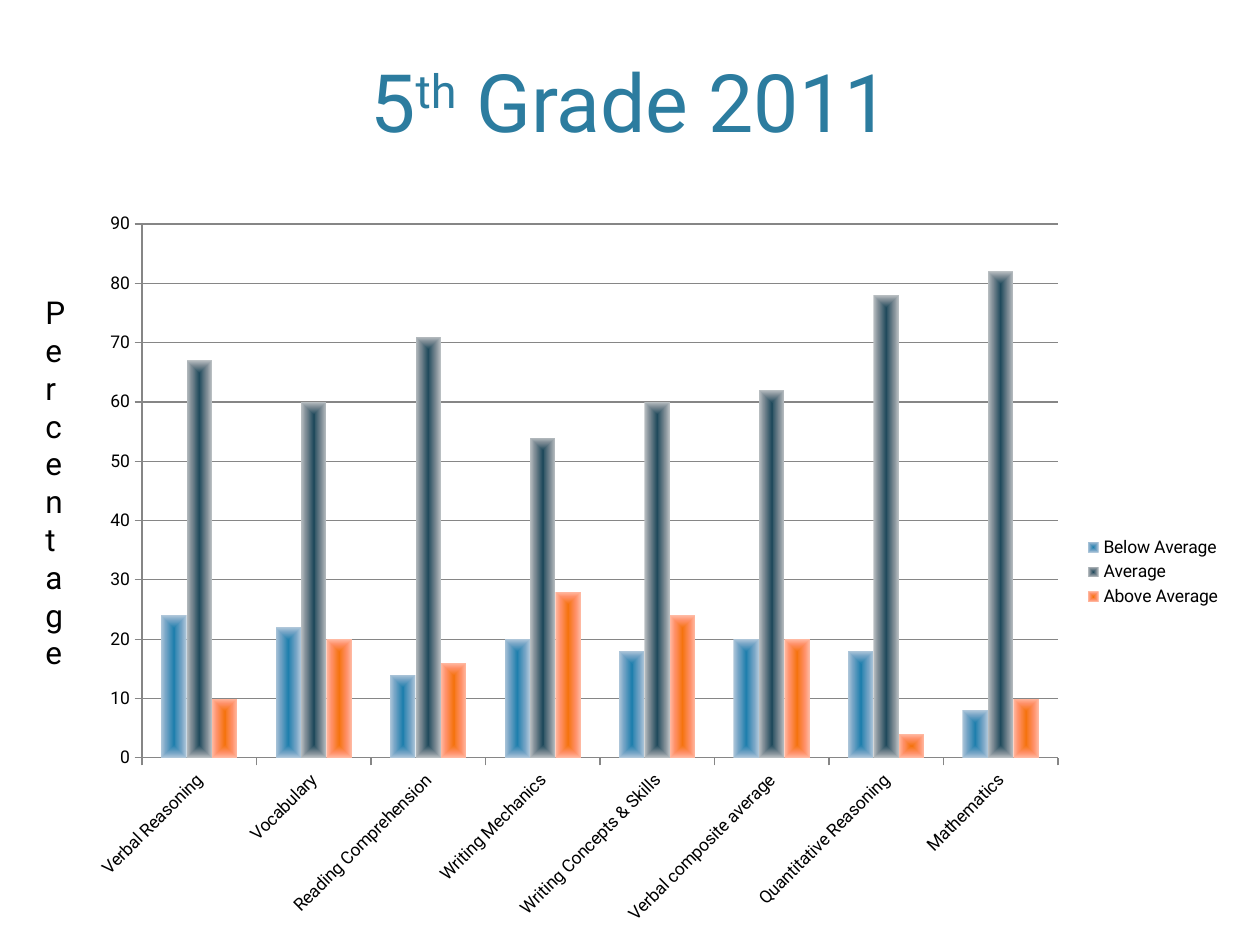
from dataclasses import dataclass

from lxml import etree
from pptx import Presentation
from pptx.chart.data import CategoryChartData
from pptx.dml.color import RGBColor
from pptx.enum.chart import XL_CHART_TYPE, XL_LEGEND_POSITION, XL_TICK_MARK
from pptx.enum.text import MSO_ANCHOR, PP_ALIGN
from pptx.oxml import parse_xml
from pptx.oxml.ns import nsdecls, qn
from pptx.util import Emu, Pt

COLUMNS = XL_CHART_TYPE.COLUMN_CLUSTERED
LEGEND_RIGHT = XL_LEGEND_POSITION.RIGHT
TICK_OUT = XL_TICK_MARK.OUTSIDE
BOTTOM, TOP = MSO_ANCHOR.BOTTOM, MSO_ANCHOR.TOP
LEFT, CENTER = PP_ALIGN.LEFT, PP_ALIGN.CENTER
PX = 914400 / 126


@dataclass(frozen=True)
class Theme:
    """Colours, font and type sizes of the slide."""

    font: str = "Roboto"
    title: str = "2C7C9F"
    text: str = "000000"
    line: str = "868686"
    title_size: int = 46
    label_size: int = 18
    chart_size: int = 10


THEME = Theme()
TITLE_BOX = (76, 15, 1108, 140)
CHART_BOX = (76, 199, 1158, 746)
PLOT_BOX = (66, 25, 916, 534)
LABEL_BOX = (33, 287, 47, 394)

TITLE_SPANS = [("5", 0), ("th", 30000), (" Grade 2011", 0)]
SUBJECTS = [
    "Verbal Reasoning", "Vocabulary", "Reading Comprehension",
    "Writing Mechanics", "Writing Concepts & Skills",
    "Verbal composite average", "Quantitative Reasoning", "Mathematics",
]
SCORES = {
    "Below Average": (24, 22, 14, 20, 18, 20, 18, 8),
    "Average": (67, 60, 71, 54, 60, 62, 78, 82),
    "Above Average": (10, 20, 16, 28, 24, 20, 4, 10),
}
GRADIENTS = {
    "Below Average": ("1F7FAD", "73A3C5", "B0C7DA"),
    "Average": ("204A5C", "7D8B94", "BCC1C4"),
    "Above Average": ("F5730F", "FF9068", "FFBBA5"),
}


def px(length):
    """Turn a length in px into EMU."""
    return Emu(round(length * PX))


def apply(target, values):
    """Set each named value on the target."""
    for name, value in values.items():
        setattr(target, name, value)


def style_font(font, size, color):
    """Give a font the theme face, a size and a colour."""
    apply(font, {"name": THEME.font, "size": Pt(size), "bold": False})
    font.color.rgb = RGBColor.from_string(color)


def add_text(page, box, spans, size, color, align, anchor):
    """Place one paragraph of (text, baseline) spans in a box."""
    frame = page.shapes.add_textbox(*map(px, box)).text_frame
    apply(frame, {"word_wrap": True, "vertical_anchor": anchor})
    para = frame.paragraphs[0]
    para.alignment = align
    for text, baseline in spans:
        span = para.add_run()
        span.text = text
        style_font(span.font, size, color)
        if baseline:
            span.font._element.set("baseline", str(baseline))


def fill_gradient(series, colors):
    """Fill a series with a gradient from its centre to its edges."""
    stops = "".join(
        f'<a:gs pos="{place}"><a:srgbClr val="{color}"/></a:gs>'
        for place, color in zip((0, 60000, 100000), colors)
    )
    series.format.fill.solid()
    solid = series._element.spPr.find(qn("a:solidFill"))
    gradient = parse_xml(
        f'<a:gradFill {nsdecls("a")} rotWithShape="1"><a:gsLst>{stops}</a:gsLst>'
        '<a:path path="rect"><a:fillToRect l="50000" t="50000" r="50000" '
        'b="50000"/></a:path></a:gradFill>'
    )
    series._element.spPr.replace(solid, gradient)


def fix_plot(chart, box, plot):
    """Set the inner plot area of a chart from px relative to its box."""
    area = chart._chartSpace.chart.plotArea
    for old in area.findall(qn("c:layout")):
        area.remove(old)
    layout = etree.Element(qn("c:layout"))
    manual = etree.SubElement(layout, qn("c:manualLayout"))
    width, height = box[2:]
    values = {"layoutTarget": "inner", "xMode": "edge", "yMode": "edge"}
    for key, length, whole in zip("xywh", plot, (width, height, width, height)):
        values[key] = round(length / whole, 4)
    for name, value in values.items():
        etree.SubElement(manual, qn(f"c:{name}")).set("val", str(value))
    area.insert(0, layout)


def style_axes(chart):
    """Set the scale, lines and labels of both axes."""
    values, subjects = chart.value_axis, chart.category_axis
    apply(values, {"minimum_scale": 0, "maximum_scale": 90, "major_unit": 10,
                   "has_major_gridlines": True})
    for axis in (values, subjects):
        axis.major_tick_mark = TICK_OUT
        style_font(axis.tick_labels.font, THEME.chart_size, THEME.text)
    for part in (values, subjects, values.major_gridlines):
        part.format.line.color.rgb = RGBColor.from_string(THEME.line)
        part.format.line.width = Pt(0.75)
    body = subjects._element.find(qn("c:txPr")).find(qn("a:bodyPr"))
    body.set("rot", "-2700000")
    body.set("vert", "horz")


def add_scores(page, box):
    """Place the clustered column chart of scores in a box."""
    data = CategoryChartData()
    data.categories = SUBJECTS
    for name, scores in SCORES.items():
        data.add_series(name, scores)
    chart = page.shapes.add_chart(COLUMNS, *map(px, box), data).chart
    apply(chart, {"has_title": False, "has_legend": True})
    apply(chart.legend, {"position": LEGEND_RIGHT, "include_in_layout": False})
    for font in (chart.font, chart.legend.font):
        style_font(font, THEME.chart_size, THEME.text)
    plot = chart.plots[0]
    apply(plot, {"gap_width": 150, "overlap": 0, "vary_by_categories": False})
    for series in plot.series:
        fill_gradient(series, GRADIENTS[series.name])
    style_axes(chart)
    fix_plot(chart, box, PLOT_BOX)


def main():
    """Build the slide and save it."""
    deck = Presentation()
    apply(deck, {"slide_width": px(1260), "slide_height": px(945)})
    page = deck.slides.add_slide(deck.slide_layouts[6])
    add_text(page, TITLE_BOX, TITLE_SPANS, THEME.title_size, THEME.title,
             CENTER, BOTTOM)
    add_scores(page, CHART_BOX)
    add_text(page, LABEL_BOX, [("Percentage", 0)], THEME.label_size, THEME.text,
             LEFT, TOP)
    deck.save("out.pptx")


if __name__ == "__main__":
    main()
